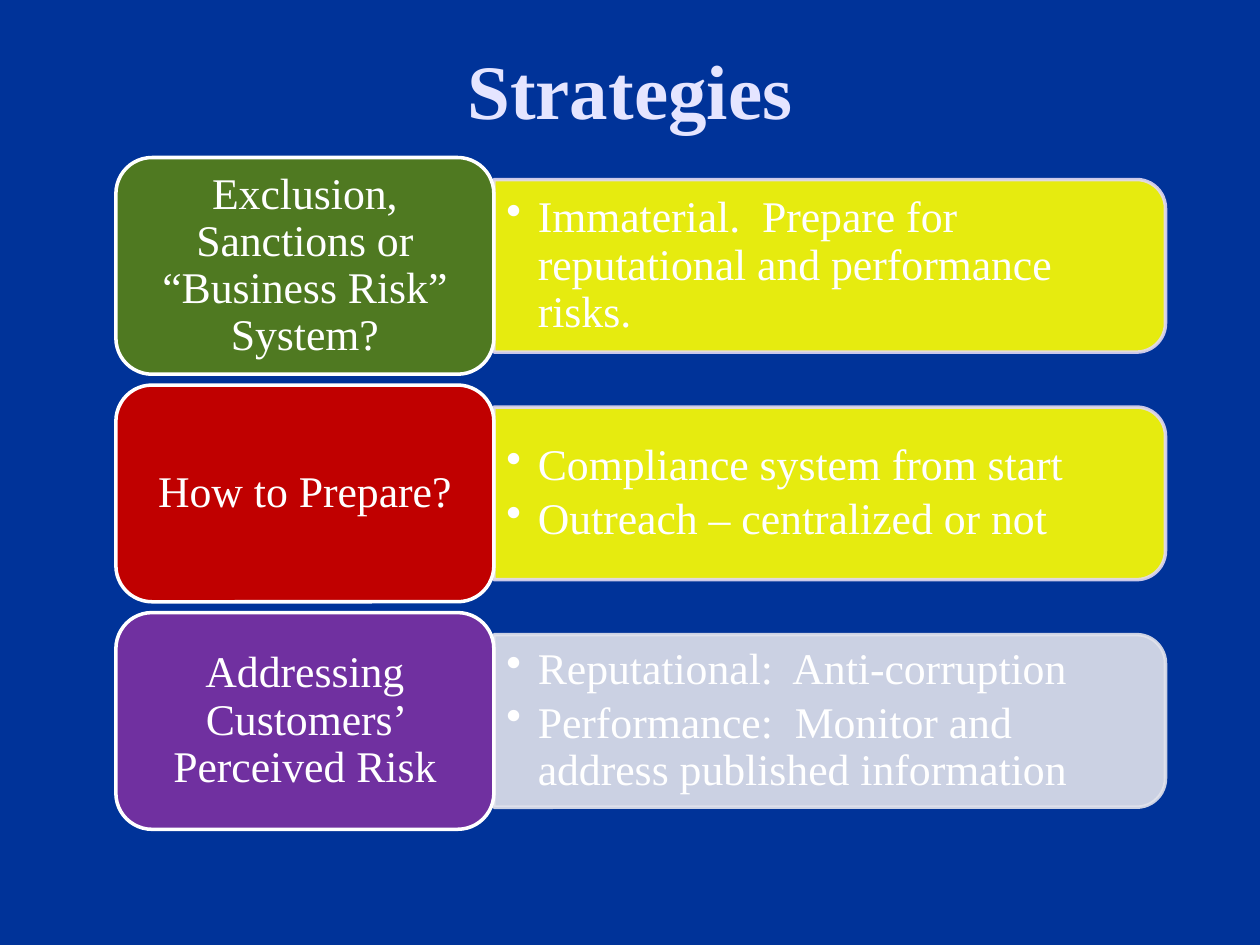
import dataclasses

import pptx
import pptx.dml.color
import pptx.enum.shapes
import pptx.enum.text
import pptx.oxml
import pptx.oxml.ns
import pptx.util

Inches = pptx.util.Inches
Pt = pptx.util.Pt
SHAPE = pptx.enum.shapes.MSO_SHAPE
ALIGN = pptx.enum.text.PP_ALIGN
MIDDLE = pptx.enum.text.MSO_ANCHOR.MIDDLE


@dataclasses.dataclass(frozen=True)
class Theme:
    font: str = "Times New Roman"
    background: str = "003399"
    title: str = "E5E5FF"
    text: str = "FFFFFF"
    label_line: str = "FFFFFF"
    green: str = "4F7921"
    red: str = "C00000"
    purple: str = "7030A0"
    yellow: str = "FFFF00"
    yellow_line: str = "E1D9F3"
    grey: str = "E2E3EC"
    panel_opacity: int = 90
    title_size: int = 44
    body_size: int = 25
    line_width: int = 2
    line_spacing: float = 0.9


THEME = Theme()

LABEL_LEFT, LABEL_WIDTH, LABEL_HEIGHT = 0.92, 3, 1.72
FIRST_TOP = 1.25
ROW_PITCH = LABEL_HEIGHT * 1.05
PANEL_LEFT = LABEL_LEFT + LABEL_WIDTH
PANEL_WIDTH, PANEL_HEIGHT = 5.33, 1.37
BULLETS_WIDTH, BULLETS_HEIGHT = 5.27, 1.24

# Label, label fill, panel fill, panel line, bullets
ROWS = [
    ("Exclusion, Sanctions or “Business Risk” System?",
     THEME.green, THEME.yellow, THEME.yellow_line,
     ["Immaterial.  Prepare for reputational and performance risks."]),
    ("How to Prepare?",
     THEME.red, THEME.yellow, THEME.yellow_line,
     ["Compliance system from start", "Outreach – centralized or not"]),
    ("Addressing Customers’ Perceived Risk",
     THEME.purple, THEME.grey, THEME.grey,
     ["Reputational:  Anti-corruption",
      "Performance:  Monitor and address published information"]),
]


def rgb(value):
    return pptx.dml.color.RGBColor.from_string(value)


def add_run(p, text, size, color, bold=False):
    r = p.add_run()
    r.text = text
    r.font.name = THEME.font
    r.font.size = Pt(size)
    r.font.bold = bold
    r.font.color.rgb = rgb(color)


def style_shape(sp, fill, line):
    sp.shadow.inherit = False
    sp.fill.solid()
    sp.fill.fore_color.rgb = rgb(fill)
    sp.line.color.rgb = rgb(line)
    sp.line.width = Pt(THEME.line_width)


def set_opacity(sp, percent):
    """Make the fill and the line of a shape partly transparent."""
    for color in sp._element.spPr.iter(pptx.oxml.ns.qn("a:srgbClr")):
        alpha = pptx.oxml.parse_xml(
            f'<a:alpha {pptx.oxml.ns.nsdecls("a")} val="{percent * 1000}"/>')
        color.append(alpha)


def set_bullet(p):
    pPr = p._p.get_or_add_pPr()
    pPr.set("marL", str(Inches(0.25)))
    pPr.set("indent", str(Inches(-0.25)))
    pPr.append(pptx.oxml.parse_xml(
        f'<a:buChar {pptx.oxml.ns.nsdecls("a")} char="•"/>'))


def add_text_box(slide, left, top, width, height):
    box = slide.shapes.add_textbox(
        Inches(left), Inches(top), Inches(width), Inches(height))
    tf = box.text_frame
    tf.word_wrap = True
    tf.vertical_anchor = MIDDLE
    return tf


def add_title(slide, text):
    p = add_text_box(slide, 0.5, 0.08, 9, 1.25).paragraphs[0]
    p.alignment = ALIGN.CENTER
    add_run(p, text, THEME.title_size, THEME.title, bold=True)


def add_panel(slide, middle, fill, line):
    """Add a panel turned a quarter so that its round corners face right."""
    sp = slide.shapes.add_shape(
        SHAPE.ROUND_2_SAME_RECTANGLE,
        Inches(PANEL_LEFT + (PANEL_WIDTH - PANEL_HEIGHT) / 2),
        Inches(middle - PANEL_WIDTH / 2),
        Inches(PANEL_HEIGHT), Inches(PANEL_WIDTH))
    sp.rotation = 90
    style_shape(sp, fill, line)
    set_opacity(sp, THEME.panel_opacity)


def add_bullets(slide, middle, bullets):
    tf = add_text_box(slide, PANEL_LEFT, middle - BULLETS_HEIGHT / 2,
                      BULLETS_WIDTH, BULLETS_HEIGHT)
    for i, text in enumerate(bullets):
        p = tf.add_paragraph() if i else tf.paragraphs[0]
        set_bullet(p)
        p.line_spacing = THEME.line_spacing
        if i < len(bullets) - 1:
            p.space_after = Pt(THEME.body_size * 0.15)
        add_run(p, text, THEME.body_size, THEME.text)


def add_label(slide, top, text, fill):
    sp = slide.shapes.add_shape(
        SHAPE.ROUNDED_RECTANGLE, Inches(LABEL_LEFT), Inches(top),
        Inches(LABEL_WIDTH), Inches(LABEL_HEIGHT))
    style_shape(sp, fill, THEME.label_line)
    tf = sp.text_frame
    tf.word_wrap = True
    tf.vertical_anchor = MIDDLE
    p = tf.paragraphs[0]
    p.alignment = ALIGN.CENTER
    p.line_spacing = THEME.line_spacing
    add_run(p, text, THEME.body_size, THEME.text)


def main():
    prs = pptx.Presentation()
    prs.slide_width, prs.slide_height = Inches(10), Inches(7.5)
    slide = prs.slides.add_slide(prs.slide_layouts[6])
    slide.background.fill.solid()
    slide.background.fill.fore_color.rgb = rgb(THEME.background)

    for i, (label, label_fill, fill, line, bullets) in enumerate(ROWS):
        top = FIRST_TOP + i * ROW_PITCH
        middle = top + LABEL_HEIGHT / 2
        add_panel(slide, middle, fill, line)
        add_bullets(slide, middle, bullets)
        add_label(slide, top, label, label_fill)
    add_title(slide, "Strategies")

    prs.save("out.pptx")


if __name__ == "__main__":
    main()
